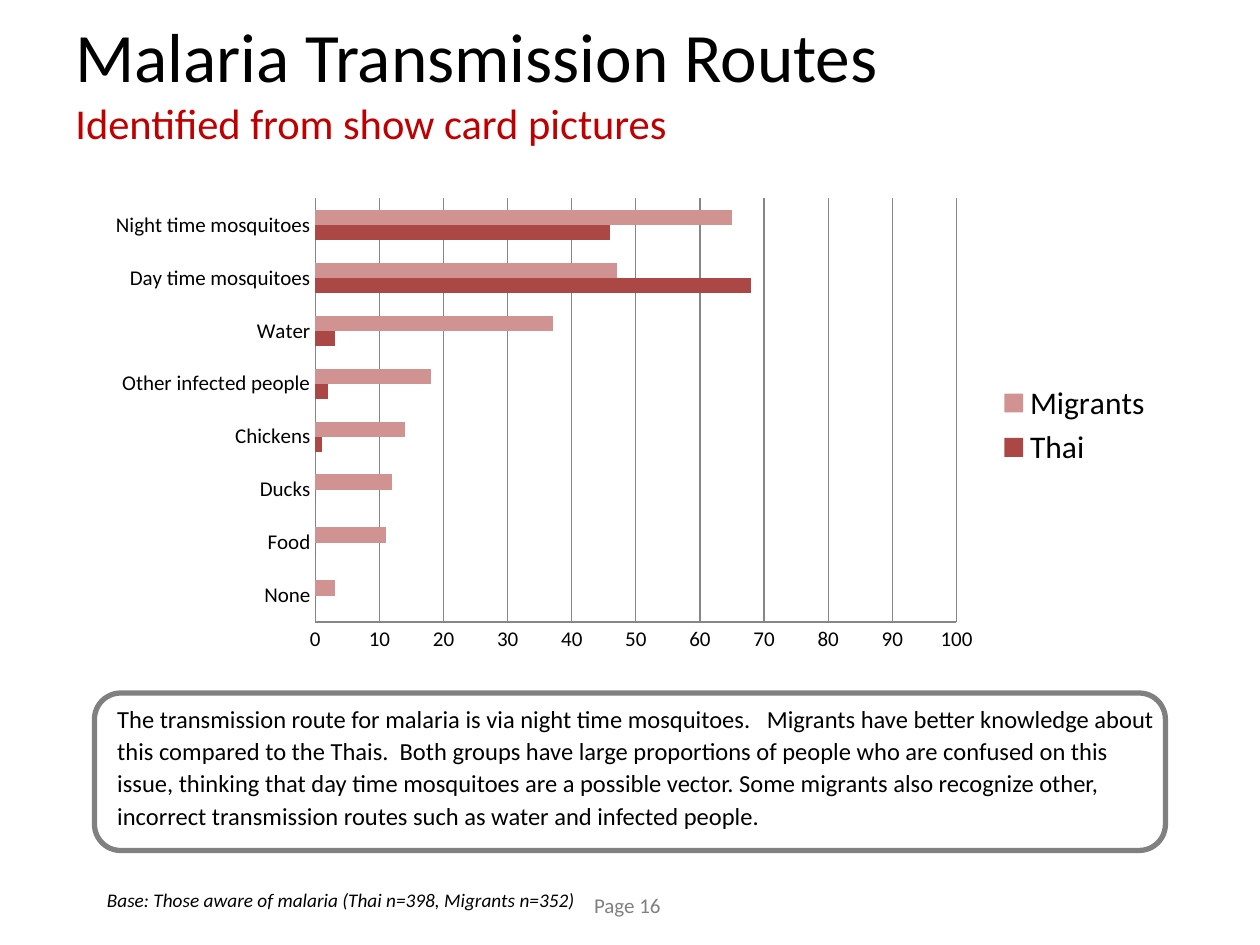
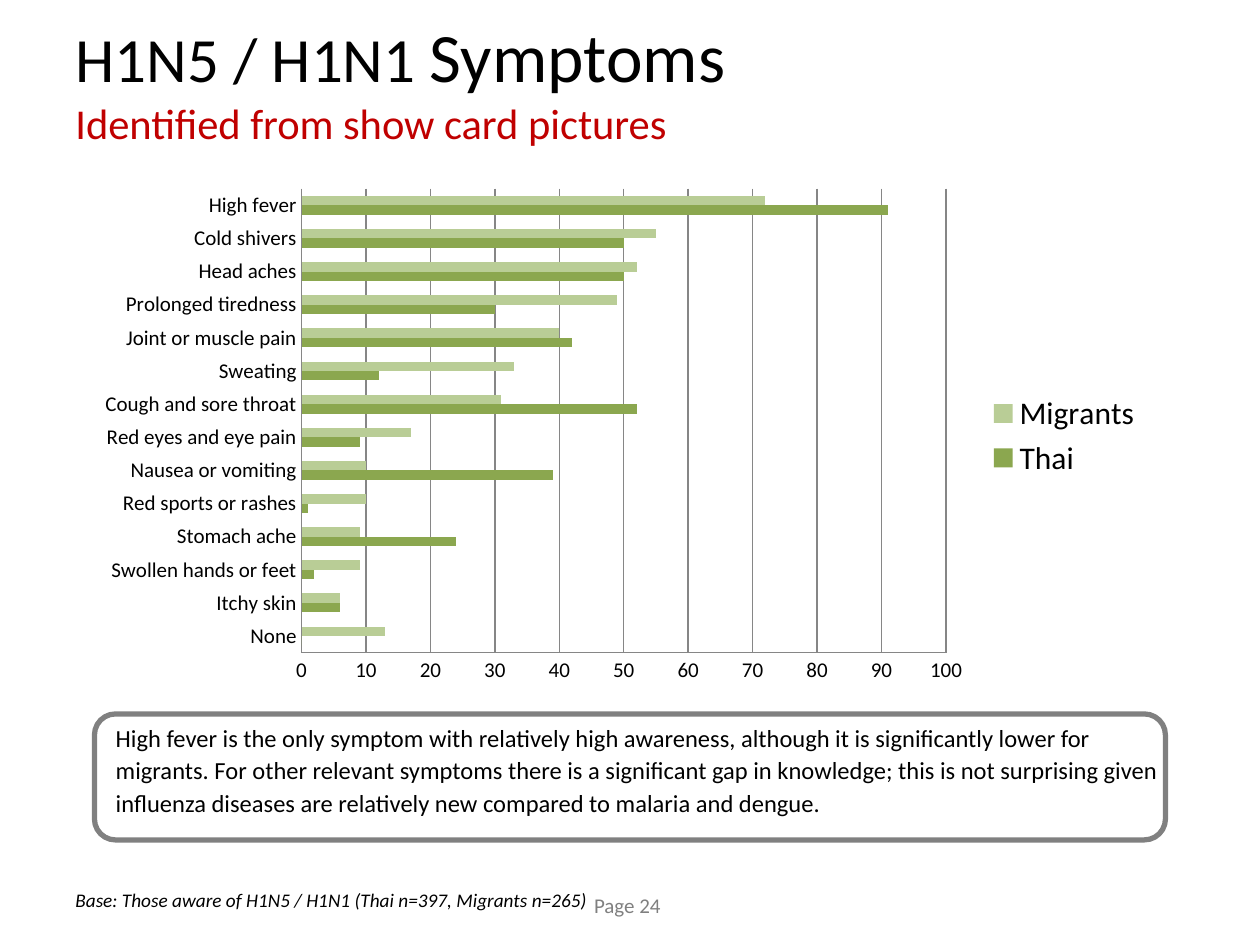
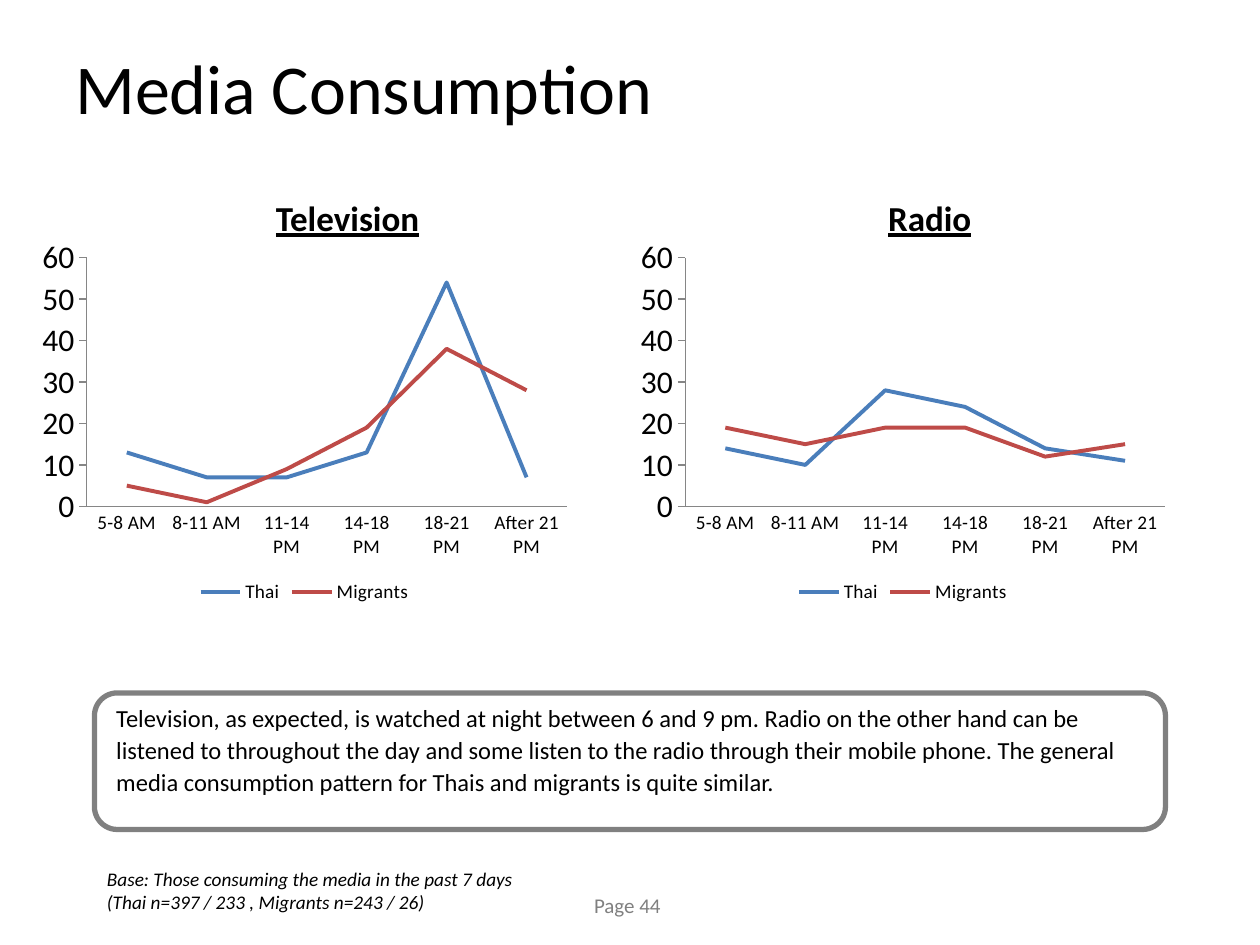
from pptx import Presentation
from pptx import util as u
from pptx.chart.data import CategoryChartData
from pptx.dml.color import RGBColor
from pptx.enum import chart as ch, shapes, text

# Layout grid: 12 units to the inch, so 120 columns by 90 rows
COLUMNS, ROWS = 120, 90
UNIT = u.Inches(1) / 12

FONT = "Calibri"
BLACK = RGBColor(0x00, 0x00, 0x00)
GREY = RGBColor(0x80, 0x80, 0x80)
AXIS_GREY = RGBColor(0x86, 0x86, 0x86)
DARK_RED = RGBColor(0xC0, 0x00, 0x00)
REDS = (RGBColor(0xAB, 0x47, 0x44), RGBColor(0xD1, 0x93, 0x92))
GREENS = (RGBColor(0x8B, 0xA7, 0x4F), RGBColor(0xB9, 0xCD, 0x96))
LINE_COLOURS = (RGBColor(0x4A, 0x7E, 0xBB), RGBColor(0xBE, 0x4B, 0x48))

SUBTITLE = ("Identified from show card pictures", 24.3, DARK_RED)
GROUPS = ("Thai", "Migrants")

ROUTES = {
    "None": (0, 3),
    "Food": (0, 11),
    "Ducks": (0, 12),
    "Chickens": (1, 14),
    "Other infected people": (2, 18),
    "Water": (3, 37),
    "Day time mosquitoes": (68, 47),
    "Night time mosquitoes": (46, 65),
}
SYMPTOMS = {
    "None": (0, 13),
    "Itchy skin": (6, 6),
    "Swollen hands or feet": (2, 9),
    "Stomach ache": (24, 9),
    "Red sports or rashes": (1, 10),
    "Nausea or vomiting": (39, 10),
    "Red eyes and eye pain": (9, 17),
    "Cough and sore throat": (52, 31),
    "Sweating": (12, 33),
    "Joint or muscle pain": (42, 40),
    "Prolonged tiredness": (30, 49),
    "Head aches": (50, 52),
    "Cold shivers": (50, 55),
    "High fever": (91, 72),
}
TELEVISION = {
    "5-8 AM": (13, 5),
    "8-11 AM": (7, 1),
    "11-14 PM": (7, 9),
    "14-18 PM": (13, 19),
    "18-21 PM": (54, 38),
    "After 21 PM": (7, 28),
}
RADIO = dict(zip(TELEVISION, [(14, 19), (10, 15), (28, 19), (24, 19), (14, 12), (11, 15)]))


def grid(*cells):
    """Turn left, top, width, height in grid units into lengths."""
    return [u.Emu(round(cell * UNIT)) for cell in cells]


def add_run(paragraph, wording, size, colour=BLACK, **styles):
    run = paragraph.add_run()
    run.text = wording
    run.font.name = FONT
    run.font.size = u.Pt(size)
    run.font.color.rgb = colour
    for style, value in styles.items():
        setattr(run.font, style, value)


def add_label(slide, cells, wording, size, colour=BLACK, wrap=False, **styles):
    box = slide.shapes.add_textbox(*grid(*cells))
    box.text_frame.word_wrap = wrap
    add_run(box.text_frame.paragraphs[0], wording, size, colour, **styles)


def add_title(slide, lines, top=3):
    """Each line is a list of (wording, size, colour) runs."""
    box = slide.shapes.add_textbox(*grid(6, top, COLUMNS - 12, 9.36))
    frame = box.text_frame
    frame.word_wrap = True
    frame.vertical_anchor = text.MSO_ANCHOR.MIDDLE
    paragraph = frame.paragraphs[0]
    for index, line in enumerate(lines):
        if index:
            paragraph.add_line_break()
        for run in line:
            add_run(paragraph, *run)


def add_comment(slide, top, height, wording):
    """Rounded frame with the finding of the slide."""
    shape = slide.shapes.add_shape(
        shapes.MSO_SHAPE.ROUNDED_RECTANGLE, *grid(9, top, COLUMNS - 18, height))
    shape.shadow.inherit = False
    shape.fill.background()
    shape.line.color.rgb = GREY
    shape.line.width = u.Pt(3)
    frame = shape.text_frame
    frame.word_wrap = True
    frame.vertical_anchor = text.MSO_ANCHOR.TOP
    frame.margin_left = frame.margin_right = frame.margin_top = frame.margin_bottom = 0
    paragraph = frame.paragraphs[0]
    paragraph.alignment = text.PP_ALIGN.LEFT
    paragraph.line_spacing = 1.1
    paragraph._p.get_or_add_pPr().set("marL", str(u.Inches(0.12)))
    add_run(paragraph, wording, 14)


def style_axis(axis, size, tick):
    axis.major_tick_mark = tick
    axis.minor_tick_mark = ch.XL_TICK_MARK.NONE
    axis.tick_labels.font.size = u.Pt(size)
    axis.format.line.color.rgb = AXIS_GREY
    axis.format.line.width = u.Pt(0.75)


def add_chart(slide, kind, cells, values, maximum, label_sizes, tick, legend_place, legend_size):
    data = CategoryChartData()
    data.categories = list(values)
    for name, numbers in zip(GROUPS, zip(*values.values())):
        data.add_series(name, numbers)
    chart = slide.shapes.add_chart(kind, *grid(*cells), data).chart
    chart.has_title = False
    chart.font.name = FONT
    chart.font.size = u.Pt(18)
    chart.font.color.rgb = BLACK
    chart.plots[0].vary_by_categories = False

    # Axes
    style_axis(chart.category_axis, label_sizes[0], ch.XL_TICK_MARK.NONE)
    style_axis(chart.value_axis, label_sizes[1], tick)
    chart.value_axis.minimum_scale = 0
    chart.value_axis.maximum_scale = maximum
    chart.value_axis.major_unit = 10
    chart.value_axis.has_major_gridlines = False

    # Legend
    chart.has_legend = True
    chart.legend.position = legend_place
    chart.legend.include_in_layout = False
    chart.legend.font.size = u.Pt(legend_size)
    return chart


def add_bar_chart(slide, cells, values, colours):
    chart = add_chart(slide, ch.XL_CHART_TYPE.BAR_CLUSTERED, cells, values, 100, (12, 12),
                      ch.XL_TICK_MARK.NONE, ch.XL_LEGEND_POSITION.RIGHT, 18)
    chart.value_axis.has_major_gridlines = True
    gridline = chart.value_axis.major_gridlines.format.line
    gridline.color.rgb = AXIS_GREY
    gridline.width = u.Pt(0.75)
    chart.plots[0].gap_width = 150
    for series, colour in zip(chart.plots[0].series, colours):
        series.format.fill.solid()
        series.format.fill.fore_color.rgb = colour


def add_line_chart(slide, cells, values):
    chart = add_chart(slide, ch.XL_CHART_TYPE.LINE, cells, values, 60, (11, 18),
                      ch.XL_TICK_MARK.OUTSIDE, ch.XL_LEGEND_POSITION.BOTTOM, 11)
    for series, colour in zip(chart.plots[0].series, LINE_COLOURS):
        series.smooth = False
        series.marker.style = ch.XL_MARKER_STYLE.NONE
        series.format.line.color.rgb = colour
        series.format.line.width = u.Pt(2.25)


def add_page(presentation, number):
    slide = presentation.slides.add_slide(presentation.slide_layouts[6])
    add_label(slide, (55.4, 84.4, 9.24, 3.6), f"Page {number}", 12, GREY)
    return slide


def add_base(slide, cells, wording, wrap=False):
    add_label(slide, cells, wording, 11, wrap=wrap, italic=True)


def routes_slide(presentation):
    slide = add_page(presentation, 16)
    add_title(slide, [[("Malaria Transmission Routes", 39.6)], [SUBTITLE]])
    add_comment(
        slide, 66, 15,
        "The transmission route for malaria is via night time mosquitoes.   Migrants have better "
        "knowledge about this compared to the Thais.  Both groups have large proportions of people "
        "who are confused on this issue, thinking that day time mosquitoes are a possible vector. "
        "Some migrants also recognize other, incorrect transmission routes such as water and "
        "infected people.")
    add_bar_chart(slide, (9, 18, 102, 45), ROUTES, REDS)
    add_base(slide, (9, 84, 47.28, 3.48),
             "Base: Those aware of malaria (Thai n=398, Migrants n=352)")


def symptoms_slide(presentation):
    slide = add_page(presentation, 24)
    add_title(slide, [[("H1N5 / H1N1 ", 36), ("Symptoms", 39.6)], [SUBTITLE]])
    add_comment(
        slide, 68, 12,
        "High fever is the only symptom with relatively high awareness, although it is "
        "significantly lower for migrants. For other relevant symptoms there is a significant gap "
        "in knowledge; this is not surprising given influenza diseases are relatively new compared "
        "to malaria and dengue.")
    add_bar_chart(slide, (8, 17, 102, 49), SYMPTOMS, GREENS)
    add_base(slide, (6, 84, 51.6, 3.48),
             "Base: Those aware of H1N5 / H1N1 (Thai n=397, Migrants n=265)")


def media_slide(presentation):
    slide = add_page(presentation, 44)
    add_title(slide, [[("Media Consumption", 40)]], top=3.6)
    add_comment(
        slide, 66, 13,
        "Television, as expected, is watched at night between 6 and 9 pm. Radio on the other hand "
        "can be listened to throughout the day and some listen to the radio through their mobile "
        "phone. The general media consumption pattern for Thais and migrants is quite similar.")
    media = (("Television", TELEVISION, 3, 25.08, 16.2), ("Radio", RADIO, 60, 83.4, 10.44))
    for name, values, left, label_left, label_width in media:
        add_line_chart(slide, (left, 22, 52, 36), values)
        add_label(slide, (label_left, 18.12, label_width, 5.28), name, 20,
                  bold=True, underline=True)
    add_base(slide, (9, 82, 45, 5.64),
             "Base: Those consuming the media in the past 7 days "
             "(Thai n=397 / 233 , Migrants n=243 / 26)", wrap=True)


def main():
    presentation = Presentation()
    presentation.slide_width, presentation.slide_height = grid(COLUMNS, ROWS)
    routes_slide(presentation)
    symptoms_slide(presentation)
    media_slide(presentation)
    presentation.save("out.pptx")


if __name__ == "__main__":
    main()
